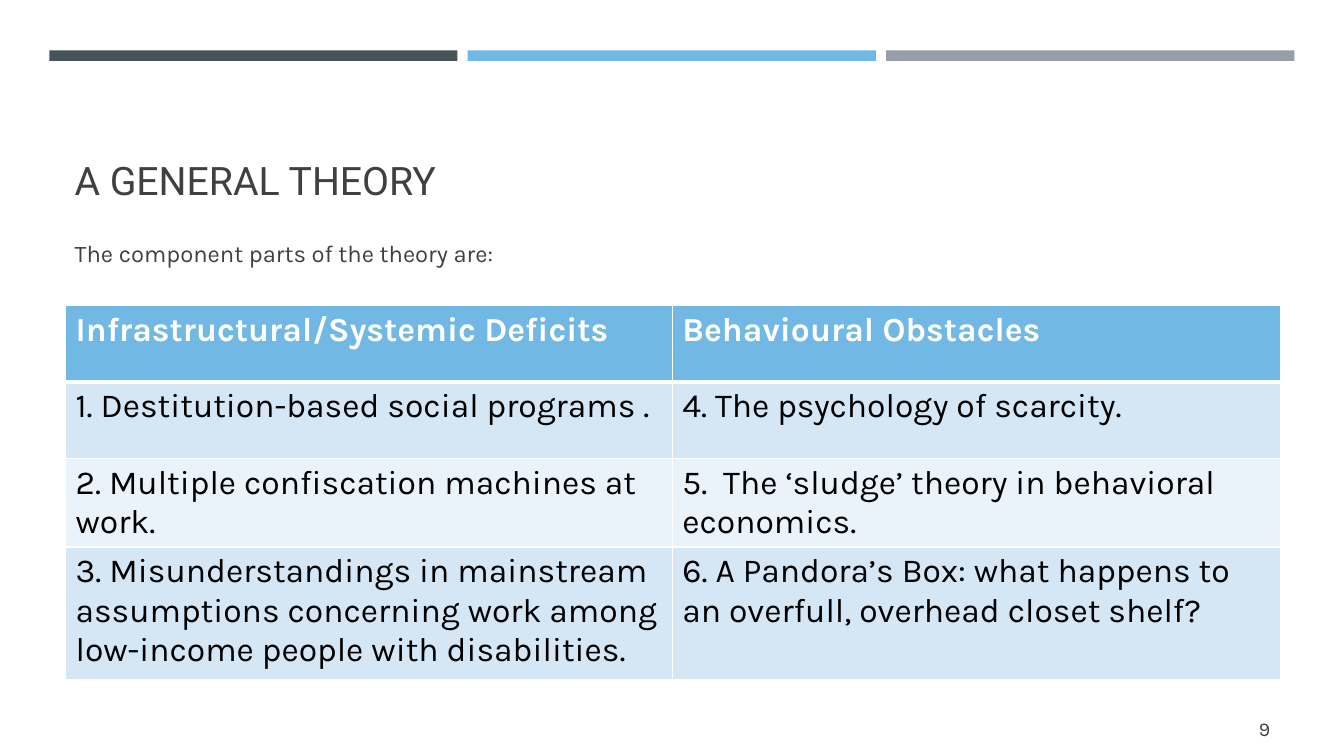
import pptx
import pptx.dml.color
import pptx.enum.shapes
import pptx.enum.text
import pptx.oxml
import pptx.oxml.ns
import pptx.util
from pptx.util import Pt

COLORS = {
    "slate": "465359",
    "sky": "71B9E4",
    "grey": "969FA7",
    "text": "404040",
    "white": "FFFFFF",
    "black": "000000",
    "band_dark": "D5E6F5",
    "band_light": "EBF3FA",
}

THEORY_ROWS = [
    ("Infrastructural/Systemic Deficits", "Behavioural Obstacles"),
    ("1. Destitution-based social programs .", "4. The psychology of scarcity."),
    ("2. Multiple confiscation machines at work.",
     "5.  The ‘sludge’ theory in behavioral economics."),
    ("3. Misunderstandings in mainstream assumptions concerning work among "
     "low-income people with disabilities.",
     "6. A Pandora’s Box: what happens to an overfull, overhead closet shelf?"),
]
ROW_HEIGHTS = [54.72, 54.72, 54.72, 95.04]
COLUMN_WIDTHS = [433.44, 434.16]


def rgb(name):
    return pptx.dml.color.RGBColor.from_string(COLORS[name])


def place(shape, left, top, width, height):
    shape.left, shape.top = Pt(left), Pt(top)
    shape.width, shape.height = Pt(width), Pt(height)


def style_para(para, size, color, font="Karla", bold=False):
    para.font.size = Pt(size)
    para.font.name = font
    para.font.bold = bold
    para.font.color.rgb = rgb(color)


def fill_text(shape, text, size, font, anchor, align):
    frame = shape.text_frame
    frame.word_wrap = True
    frame.auto_size = pptx.enum.text.MSO_AUTO_SIZE.NONE
    frame.vertical_anchor = anchor
    para = frame.paragraphs[0]
    para.text = text
    para.alignment = align
    style_para(para, size, "text", font)
    return para


def remove_bullet(para):
    properties = para._p.get_or_add_pPr()
    properties.set("marL", "0")
    properties.set("indent", "0")
    properties.append(pptx.oxml.parse_xml(
        f'<a:buNone {pptx.oxml.ns.nsdecls("a")}/>'))


def add_bar(page, left, color):
    bar = page.shapes.add_shape(
        pptx.enum.shapes.MSO_SHAPE.RECTANGLE,
        Pt(left), Pt(36), Pt(291.6), Pt(7.5))
    bar.shadow.inherit = False
    bar.fill.solid()
    bar.fill.fore_color.rgb = rgb(color)
    bar.line.fill.background()


def add_borders(cell, bottom):
    properties = cell._tc.get_or_add_tcPr()
    for side, width in (("L", 1), ("R", 1), ("T", 1), ("B", bottom)):
        properties.append(pptx.oxml.parse_xml(
            f'<a:ln{side} {pptx.oxml.ns.nsdecls("a")} w="{Pt(width)}">'
            f'<a:solidFill><a:srgbClr val="{COLORS["white"]}"/></a:solidFill>'
            f'</a:ln{side}>'))


def add_theory_table(page):
    table = page.shapes.add_table(
        len(THEORY_ROWS), len(COLUMN_WIDTHS), Pt(46.8), Pt(218.16),
        Pt(sum(COLUMN_WIDTHS)), Pt(sum(ROW_HEIGHTS))).table
    for column, width in zip(table.columns, COLUMN_WIDTHS):
        column.width = Pt(width)
    for row, height in zip(table.rows, ROW_HEIGHTS):
        row.height = Pt(height)

    for row_index, texts in enumerate(THEORY_ROWS):
        header = row_index == 0
        band = "band_dark" if row_index % 2 else "band_light"
        for column_index, text in enumerate(texts):
            cell = table.cell(row_index, column_index)
            add_borders(cell, bottom=3 if header else 1)
            cell.fill.solid()
            cell.fill.fore_color.rgb = rgb("sky" if header else band)
            para = cell.text_frame.paragraphs[0]
            para.text = text
            style_para(para, 24, "white" if header else "black", bold=header)


def main():
    deck = pptx.Presentation()
    deck.slide_width, deck.slide_height = Pt(960), Pt(540)
    page = deck.slides.add_slide(deck.slide_layouts[1])
    anchors = pptx.enum.text.MSO_ANCHOR
    aligns = pptx.enum.text.PP_ALIGN

    # Bars across the top
    for index, color in enumerate(("slate", "sky", "grey")):
        add_bar(page, 35.2 + index * 298.9, color)

    # Title and introduction
    title = page.shapes.title
    place(title, 46.08, 55.44, 868.32, 93.6)
    fill_text(title, "A GENERAL THEORY", 28, "Roboto",
              anchors.BOTTOM, aligns.LEFT)
    intro = page.placeholders[1]
    place(intro, 46.08, 159.84, 868.32, 40.32)
    para = fill_text(intro, "The component parts of the theory are:", 17,
                     "Karla", anchors.MIDDLE, aligns.LEFT)
    para.line_spacing = 1.1
    para.space_before, para.space_after = Pt(3.4), Pt(6)
    remove_bullet(para)

    # Table of the theory's parts
    add_theory_table(page)

    # Page number
    number = page.shapes.add_textbox(Pt(831.6), Pt(506.16), Pt(82.8), Pt(28.8))
    fill_text(number, "9", 14, "Karla", anchors.MIDDLE, aligns.RIGHT)

    deck.save("out.pptx")


if __name__ == "__main__":
    main()
